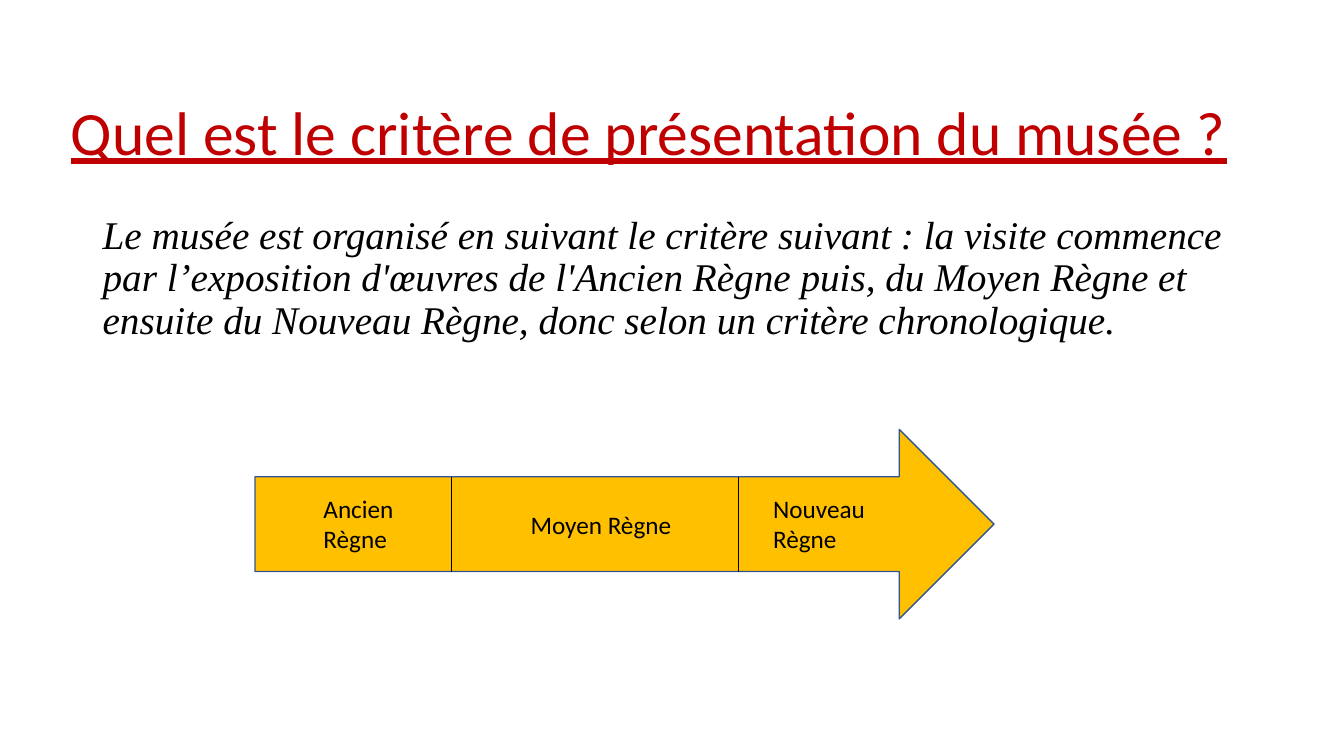
from lxml.etree import SubElement
from pptx import Presentation
from pptx.dml.color import RGBColor
from pptx.enum.shapes import MSO_CONNECTOR as Connector, MSO_SHAPE as Shape
from pptx.enum.text import MSO_ANCHOR as Anchor, PP_ALIGN as Align
from pptx.oxml.ns import qn
from pptx.util import Pt

PX = 9144
RED = RGBColor(0xC0, 0x00, 0x00)
BLACK = RGBColor(0x00, 0x00, 0x00)
GOLD = RGBColor(0xFF, 0xC0, 0x00)
BLUE = RGBColor(0x32, 0x54, 0x91)

TITLE_FONT = {"name": "Calibri", "size": Pt(44), "underline": True}
BODY_FONT = {"name": "Times New Roman", "size": Pt(28), "italic": True}
LABEL_FONT = {"name": "Calibri", "size": Pt(18)}

ARROW_TOP, ARROW_HEIGHT = 426, 188
SHAFT_TOP = ARROW_TOP + ARROW_HEIGHT // 4
SHAFT_BOTTOM = SHAFT_TOP + ARROW_HEIGHT // 2


def scale(*lengths):
    return [length * PX for length in lengths]


def set_all(target, values):
    for name, value in values.items():
        setattr(target, name, value)


def write(box, lines, font, color=BLACK, anchor=Anchor.TOP, **layout):
    frame = box.text_frame
    set_all(frame, {"word_wrap": True, "vertical_anchor": anchor})
    for index, line in enumerate(lines):
        para = frame.paragraphs[0] if index == 0 else frame.add_paragraph()
        set_all(para, layout)
        span = para.add_run()
        span.text = line
        set_all(span.font, font)
        span.font.color.rgb = color


def add_text(page, area, lines, font, **layout):
    box = page.shapes.add_textbox(*scale(*area))
    write(box, lines, font, **layout)


def add_timeline(page, area, label):
    arrow = page.shapes.add_shape(Shape.RIGHT_ARROW, *scale(*area))
    arrow.shadow.inherit = False
    arrow.fill.solid()
    arrow.fill.fore_color.rgb = GOLD
    arrow.line.color.rgb = BLUE
    arrow.line.width = Pt(1)
    write(arrow, [label], LABEL_FONT, anchor=Anchor.MIDDLE, alignment=Align.CENTER)


def add_divider(page, x):
    divider = page.shapes.add_connector(
        Connector.STRAIGHT, *scale(x, SHAFT_TOP, x, SHAFT_BOTTOM))
    divider.line.color.rgb = BLACK
    divider.line.width = Pt(0.5)
    SubElement(divider._element.spPr, qn("a:effectLst"))


def main():
    deck = Presentation()
    deck.slide_width, deck.slide_height = scale(1333, 750)
    page = deck.slides.add_slide(deck.slide_layouts[6])

    add_text(page, (45, 62, 1197, 144),
             ["Quel est le critère de présentation du musée ?"],
             TITLE_FONT, color=RED, anchor=Anchor.MIDDLE,
             alignment=Align.CENTER, line_spacing=0.9)
    add_text(page, (92, 209, 1150, 200),
             ["Le musée est organisé en suivant le critère suivant : la visite "
              "commence par l’exposition d'œuvres de l'Ancien Règne puis, du "
              "Moyen Règne et ensuite du Nouveau Règne, donc selon un critère "
              "chronologique."],
             BODY_FONT, line_spacing=0.9, space_before=Pt(10))

    add_timeline(page, (253, ARROW_TOP, 733, ARROW_HEIGHT), "Moyen Règne")
    add_text(page, (311, 484, 137, 71), ["Ancien Règne"], LABEL_FONT)
    for x in (448, 732):
        add_divider(page, x)
    add_text(page, (757, 484, 116, 71), ["Nouveau", "Règne"], LABEL_FONT)

    deck.save("out.pptx")


if __name__ == "__main__":
    main()
